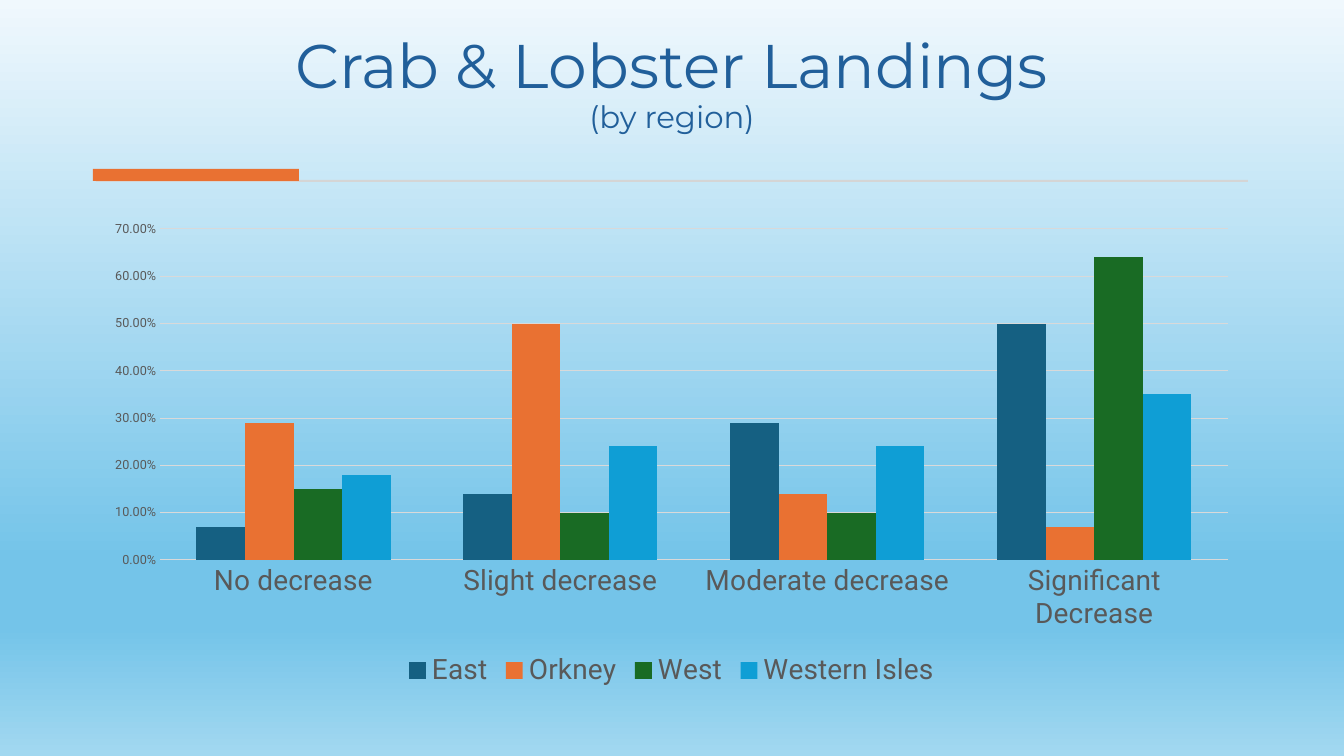
import pptx
import pptx.chart.data
import pptx.dml.color
import pptx.enum.chart
import pptx.enum.shapes
import pptx.enum.text
import pptx.oxml.ns
import pptx.util
import lxml.etree

PX = 914400 / 100.8
SKY = [(0, "F0F8FD"), (74, "74C4E9"), (83, "74C4E9"), (100, "A2D8F0")]
ANSWERS = ["No decrease", "Slight decrease", "Moderate decrease", "Significant Decrease"]
REGIONS = [
    ("East", "156082", (0.07, 0.14, 0.29, 0.5)),
    ("Orkney", "E97132", (0.29, 0.5, 0.14, 0.07)),
    ("West", "196B24", (0.15, 0.1, 0.1, 0.64)),
    ("Western Isles", "0F9ED5", (0.18, 0.24, 0.24, 0.35)),
]


def px(*lengths):
    """Turn pixel lengths into EMU."""
    return [pptx.util.Emu(round(length * PX)) for length in lengths]


def rgb(code):
    """Turn a hex string into a colour."""
    return pptx.dml.color.RGBColor.from_string(code)


def style(font, size, color, face):
    """Set the size, colour and typeface of a font."""
    font.size = pptx.util.Pt(size)
    font.color.rgb = rgb(color)
    font.name = face


def paint_sky(slide):
    """Fill the background with the vertical sky gradient."""
    fill = slide.background.fill
    fill.gradient()
    fill.gradient_angle = 270
    qn = pptx.oxml.ns.qn
    stops = next(slide.element.iter(qn("a:gsLst")))
    for stop in list(stops):
        stops.remove(stop)
    for percent, color in SKY:
        stop = lxml.etree.SubElement(stops, qn("a:gs"), pos=str(percent * 1000))
        lxml.etree.SubElement(stop, qn("a:srgbClr"), val=color)


def add_heading(slide, left, top, width, height):
    """Place the title and its smaller second line."""
    frame = slide.shapes.add_textbox(*px(left, top, width, height)).text_frame
    frame.word_wrap = True
    frame.vertical_anchor = pptx.enum.text.MSO_ANCHOR.BOTTOM
    heading = frame.paragraphs[0]
    heading.text = "Crab & Lobster Landings\v(by region)"
    heading.alignment = pptx.enum.text.PP_ALIGN.CENTER
    heading.line_spacing = 0.9
    for run, size in zip(heading.runs, (44, 22)):
        style(run.font, size, "215F9A", "Montserrat")


def add_bar(slide, left, top, width, height, color):
    """Place one plain filled bar."""
    bar = slide.shapes.add_shape(
        pptx.enum.shapes.MSO_SHAPE.RECTANGLE, *px(left, top, width, height))
    bar.shadow.inherit = False
    bar.fill.solid()
    bar.fill.fore_color.rgb = rgb(color)
    bar.line.fill.background()


def add_divider(slide, left, top, width, height):
    """Place the thin rule with the accent at its left end."""
    add_bar(slide, left + 3, top + height - 1, width - 6, 2, "D5D5D5")
    add_bar(slide, left, top, 206, height, "E97132")


def add_landings_chart(slide, left, top, width, height):
    """Place the clustered columns of answers by region."""
    landings = pptx.chart.data.CategoryChartData(number_format="0.00%")
    landings.categories = ANSWERS
    for region, _, shares in REGIONS:
        landings.add_series(region, shares)
    chart = slide.shapes.add_chart(
        pptx.enum.chart.XL_CHART_TYPE.COLUMN_CLUSTERED,
        *px(left, top, width, height), landings).chart
    style(chart.font, 10, "000000", "Roboto")
    chart.has_title = False

    columns = chart.plots[0]
    columns.gap_width = 150
    columns.overlap = 0
    columns.vary_by_categories = False
    for series, (_, color, _) in zip(columns.series, REGIONS):
        series.format.fill.solid()
        series.format.fill.fore_color.rgb = rgb(color)
        series.invert_if_negative = False

    for axis, size in ((chart.category_axis, 20), (chart.value_axis, 9)):
        axis.major_tick_mark = pptx.enum.chart.XL_TICK_MARK.NONE
        axis.minor_tick_mark = pptx.enum.chart.XL_TICK_MARK.NONE
        axis.format.line.fill.background()
        style(axis.tick_labels.font, size, "595959", "Roboto")

    shares_axis = chart.value_axis
    shares_axis.minimum_scale = 0
    shares_axis.maximum_scale = 0.7
    shares_axis.major_unit = 0.1
    shares_axis.tick_labels.number_format = "0.00%"
    shares_axis.tick_labels.number_format_is_linked = False
    gridline = shares_axis.major_gridlines.format.line
    gridline.color.rgb = rgb("D9D9D9")
    gridline.width = pptx.util.Pt(0.75)

    chart.has_legend = True
    chart.legend.position = pptx.enum.chart.XL_LEGEND_POSITION.BOTTOM
    chart.legend.include_in_layout = False
    style(chart.legend.font, 20, "595959", "Roboto")


def main():
    """Build the slide and save it."""
    deck = pptx.Presentation()
    deck.slide_width, deck.slide_height = px(1344, 756)
    slide = deck.slides.add_slide(deck.slide_layouts[6])
    paint_sky(slide)
    add_heading(slide, 93, 28, 1158, 112)
    add_divider(slide, 93, 169, 1158, 12)
    add_landings_chart(slide, 92, 212, 1159, 481)
    deck.save("out.pptx")


if __name__ == "__main__":
    main()
